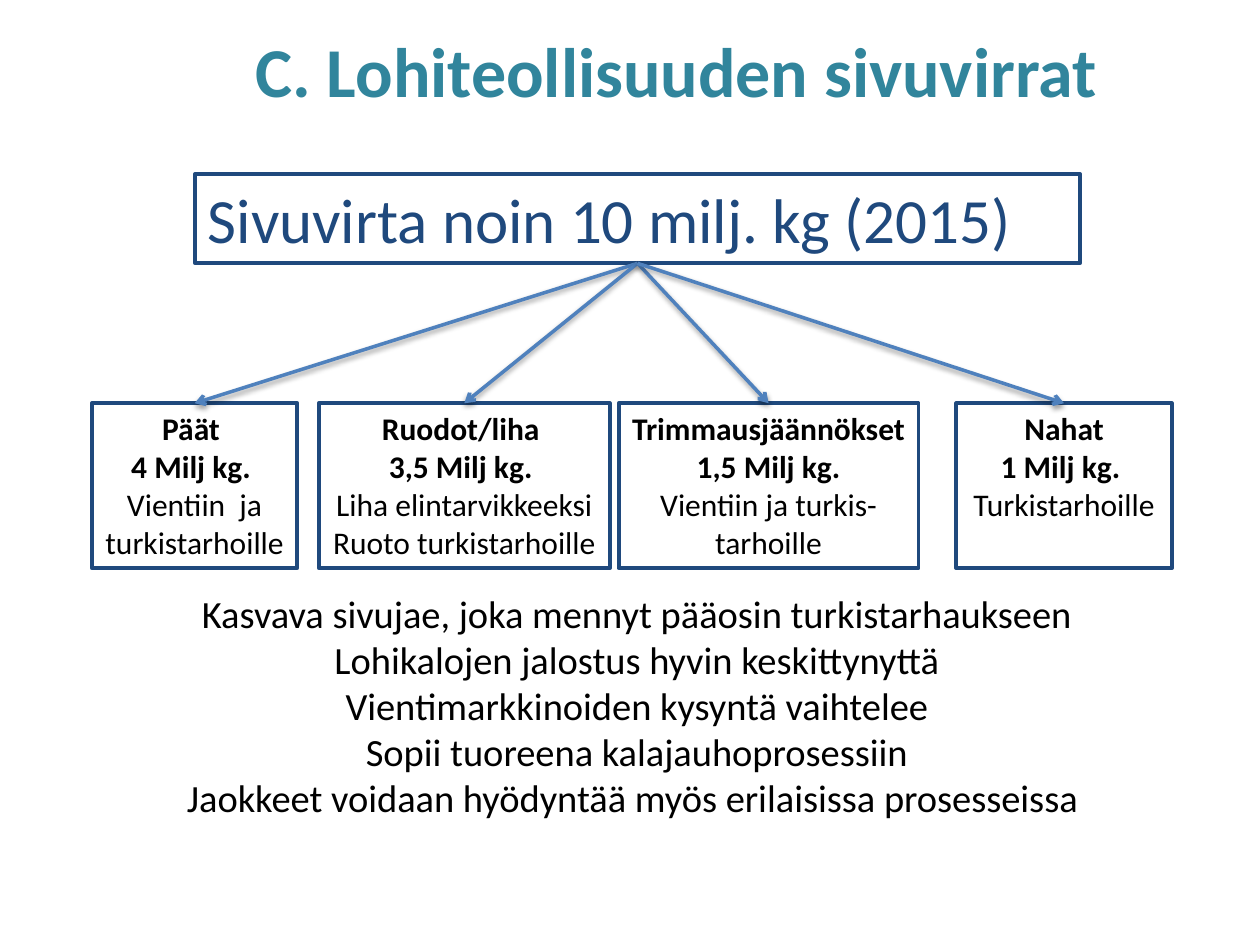
from lxml import etree
from pptx import Presentation
from pptx.dml.color import RGBColor
from pptx.enum.shapes import MSO_CONNECTOR, MSO_SHAPE
from pptx.enum.text import MSO_ANCHOR, PP_ALIGN
from pptx.oxml import parse_xml
from pptx.oxml.ns import nsdecls, qn
from pptx.util import Inches, Pt

# Content
TITLE = "C. Lohiteollisuuden sivuvirrat"
TOTAL = "Sivuvirta noin 10 milj. kg (2015)"
STREAMS = [  # left, width, lines (the first two are bold)
    (0.73, 1.63, ["Päät ", "4 Milj kg. ", "Vientiin  ja", "turkistarhoille"]),
    (2.53, 2.31, ["Ruodot/liha ", "3,5 Milj kg. ", "Liha elintarvikkeeksi",
                  "Ruoto turkistarhoille"]),
    (4.91, 2.38, ["Trimmausjäännökset", " 1,5 Milj kg. ",
                  "Vientiin ja turkis-", "tarhoille"]),
    (7.59, 1.71, ["Nahat", "1 Milj kg. ", "Turkistarhoille"]),
]
NOTES = [
    "Kasvava sivujae, joka mennyt pääosin turkistarhaukseen",
    "Lohikalojen jalostus hyvin keskittynyttä",
    "Vientimarkkinoiden kysyntä vaihtelee",
    "Sopii tuoreena kalajauhoprosessiin",
    "Jaokkeet voidaan hyödyntää myös erilaisissa prosesseissa ",
]
TEAL, NAVY, BLUE, BLACK = "31859C", "1F497D", "4F81BD", "000000"
TOTAL_LEFT, TOTAL_TOP, TOTAL_WIDTH, TOTAL_HEIGHT = 1.55, 1.38, 7.02, 0.71
STREAM_TOP, STREAM_HEIGHT = 3.2, 1.31

SHADOW = f"""<a:effectLst {nsdecls('a')}>
  <a:outerShdw blurRad="{Pt(3.1)}" dist="{Pt(1.6)}" dir="5400000" rotWithShape="0">
    <a:srgbClr val="{BLACK}"><a:alpha val="38000"/></a:srgbClr>
  </a:outerShdw></a:effectLst>"""


def rgb(value):
    return RGBColor.from_string(value)


def write(shape, lines, size, color, bold_lines=0, align=PP_ALIGN.CENTER, wrap=False):
    frame = shape.text_frame
    frame.text = "\n".join(lines)
    frame.word_wrap = wrap
    frame.vertical_anchor = MSO_ANCHOR.TOP
    for index, paragraph in enumerate(frame.paragraphs):
        paragraph.alignment = align
        for run in paragraph.runs:
            run.font.name = "Calibri"
            run.font.size = Pt(size)
            run.font.bold = index < bold_lines
            run.font.color.rgb = rgb(color)


def add_frame(left, top, width, height):
    frame = slide.shapes.add_shape(
        MSO_SHAPE.RECTANGLE, Inches(left), Inches(top), Inches(width), Inches(height))
    frame.shadow.inherit = False
    frame.fill.background()
    frame.line.color.rgb = rgb(NAVY)
    frame.line.width = Pt(2.25)
    return frame


def add_arrow(x1, y1, x2, y2):
    arrow = slide.shapes.add_connector(
        MSO_CONNECTOR.STRAIGHT, Inches(x1), Inches(y1), Inches(x2), Inches(y2))
    arrow.line.color.rgb = rgb(BLUE)
    arrow.line.width = Pt(2)
    etree.SubElement(arrow.line._get_or_add_ln(), qn("a:tailEnd"), type="arrow")
    arrow._element.spPr.append(parse_xml(SHADOW))


prs = Presentation()
prs.slide_width, prs.slide_height = Inches(10), Inches(7.5)
slide = prs.slides.add_slide(prs.slide_layouts[6])

# Title
title = slide.shapes.add_textbox(Inches(1.93), Inches(0.22), Inches(8), Inches(1.25))
title.text_frame.margin_top = 0
write(title, [TITLE], 40, TEAL, bold_lines=1, align=PP_ALIGN.LEFT, wrap=True)

# Total side stream
total = add_frame(TOTAL_LEFT, TOTAL_TOP, TOTAL_WIDTH, TOTAL_HEIGHT)
write(total, [TOTAL], 36, NAVY, align=PP_ALIGN.LEFT, wrap=True)

# Streams, each with an arrow from the total
for left, width, lines in STREAMS:
    write(add_frame(left, STREAM_TOP, width, STREAM_HEIGHT), lines, 18, BLACK, bold_lines=2)
    add_arrow(TOTAL_LEFT + TOTAL_WIDTH / 2, TOTAL_TOP + TOTAL_HEIGHT,
              left + width / 2, STREAM_TOP)

# Remarks
remarks = slide.shapes.add_textbox(Inches(1.34), Inches(4.63), Inches(7.43), Inches(1.95))
write(remarks, NOTES, 22, BLACK)

prs.save("out.pptx")
